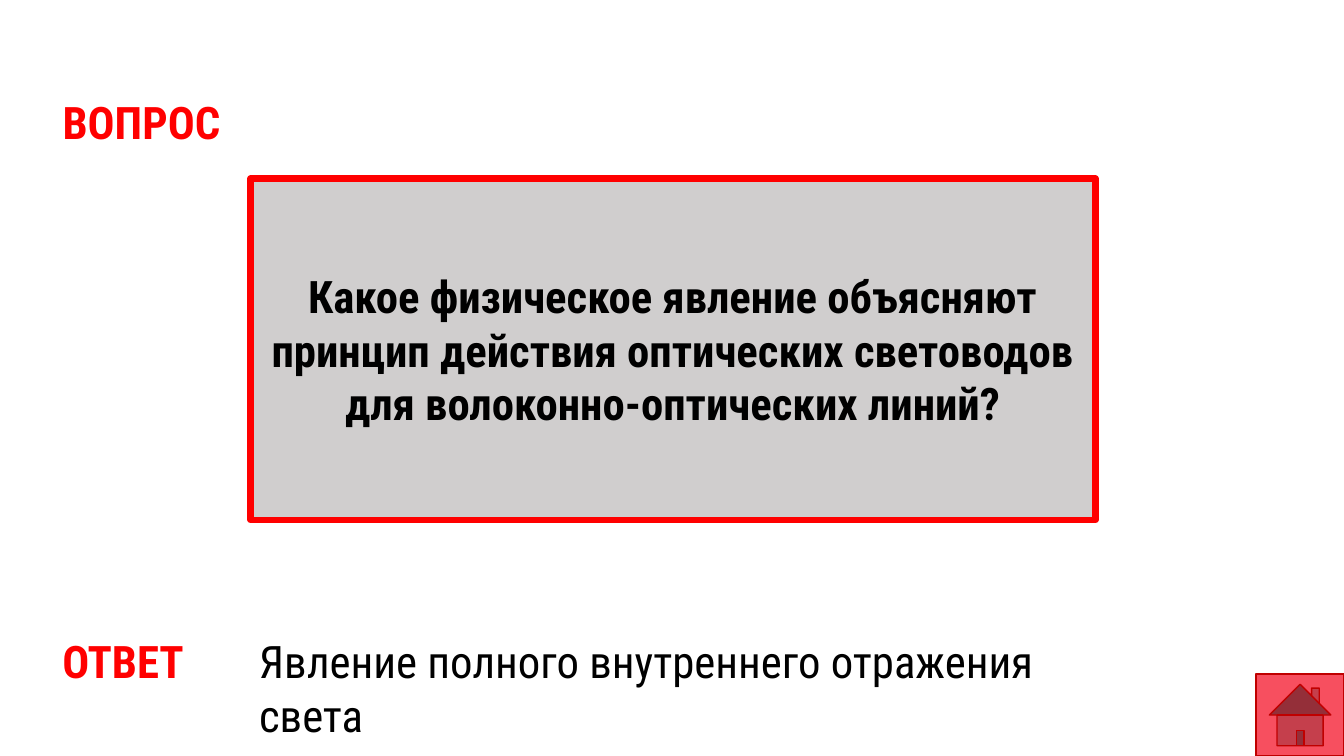
from pptx import Presentation
from pptx.dml.color import RGBColor
from pptx.enum.shapes import MSO_SHAPE
from pptx.enum.text import MSO_ANCHOR, MSO_AUTO_SIZE, PP_ALIGN
from pptx.util import Pt

RED = RGBColor(0xFF, 0x00, 0x00)
BLACK = RGBColor(0x00, 0x00, 0x00)
GREY = RGBColor(0xD0, 0xCE, 0xCE)
CORAL = RGBColor(0xF7, 0x4F, 0x5F)
DARK_RED = RGBColor(0xC0, 0x00, 0x00)

RECTANGLE = MSO_SHAPE.RECTANGLE
HOME_BUTTON = MSO_SHAPE.ACTION_BUTTON_HOME
TOP, MIDDLE = MSO_ANCHOR.TOP, MSO_ANCHOR.MIDDLE
LEFT, CENTER = PP_ALIGN.LEFT, PP_ALIGN.CENTER
NO_AUTOFIT = MSO_AUTO_SIZE.NONE
FIT_SHAPE = MSO_AUTO_SIZE.SHAPE_TO_FIT_TEXT

FONT = "Roboto Condensed"
TEXT_SIZE = Pt(32)
LABEL_LEFT = 37.5
ANSWER_TOP = 449.3
LINE_HEIGHT = 46


def write(shape, text, color, bold, align=LEFT, anchor=TOP, fit=NO_AUTOFIT):
    frame = shape.text_frame
    frame.text = text
    frame.word_wrap = True
    frame.auto_size = fit
    frame.vertical_anchor = anchor
    paragraph = frame.paragraphs[0]
    paragraph.alignment = align
    font = paragraph.runs[0].font
    font.name, font.size, font.bold = FONT, TEXT_SIZE, bold
    font.color.rgb = color


def add_heading(slide, text, left, top, width, height):
    heading = slide.shapes.title
    heading.left, heading.top = Pt(left), Pt(top)
    heading.width, heading.height = Pt(width), Pt(height)
    write(heading, text, RED, True)


def add_text(slide, text, left, width, color, bold):
    box = slide.shapes.add_textbox(Pt(left), Pt(ANSWER_TOP), Pt(width), Pt(LINE_HEIGHT))
    write(box, text, color, bold, fit=FIT_SHAPE)


def add_panel(slide, preset, left, top, width, height, fill, outline, weight):
    panel = slide.shapes.add_shape(preset, Pt(left), Pt(top), Pt(width), Pt(height))
    panel.shadow.inherit = False
    panel.fill.solid()
    panel.fill.fore_color.rgb = fill
    panel.line.color.rgb = outline
    panel.line.width = Pt(weight)
    return panel


def main():
    prs = Presentation()
    prs.slide_width, prs.slide_height = Pt(960), Pt(540)
    title_only = prs.slide_layouts[5]
    slide = prs.slides.add_slide(title_only)

    # Question
    add_heading(slide, "ВОПРОС", LABEL_LEFT, 64.1, 373, LINE_HEIGHT)
    question = add_panel(slide, RECTANGLE, 179, 127.5, 603.5, 244, GREY, RED, 4.5)
    write(question,
          "Какое физическое явление объясняют принцип действия "
          "оптических световодов для волоконно-оптических линий?",
          BLACK, True, CENTER, MIDDLE)

    # Answer
    add_text(slide, "ОТВЕТ", LABEL_LEFT, 119, RED, True)
    add_text(slide, "Явление полного внутреннего отражения света", 178, 604, BLACK, False)

    # Home button in the bottom right corner
    add_panel(slide, HOME_BUTTON, 897.3, 481.5, 62.7, 58.5, CORAL, DARK_RED, 1)

    prs.save("out.pptx")


if __name__ == "__main__":
    main()
